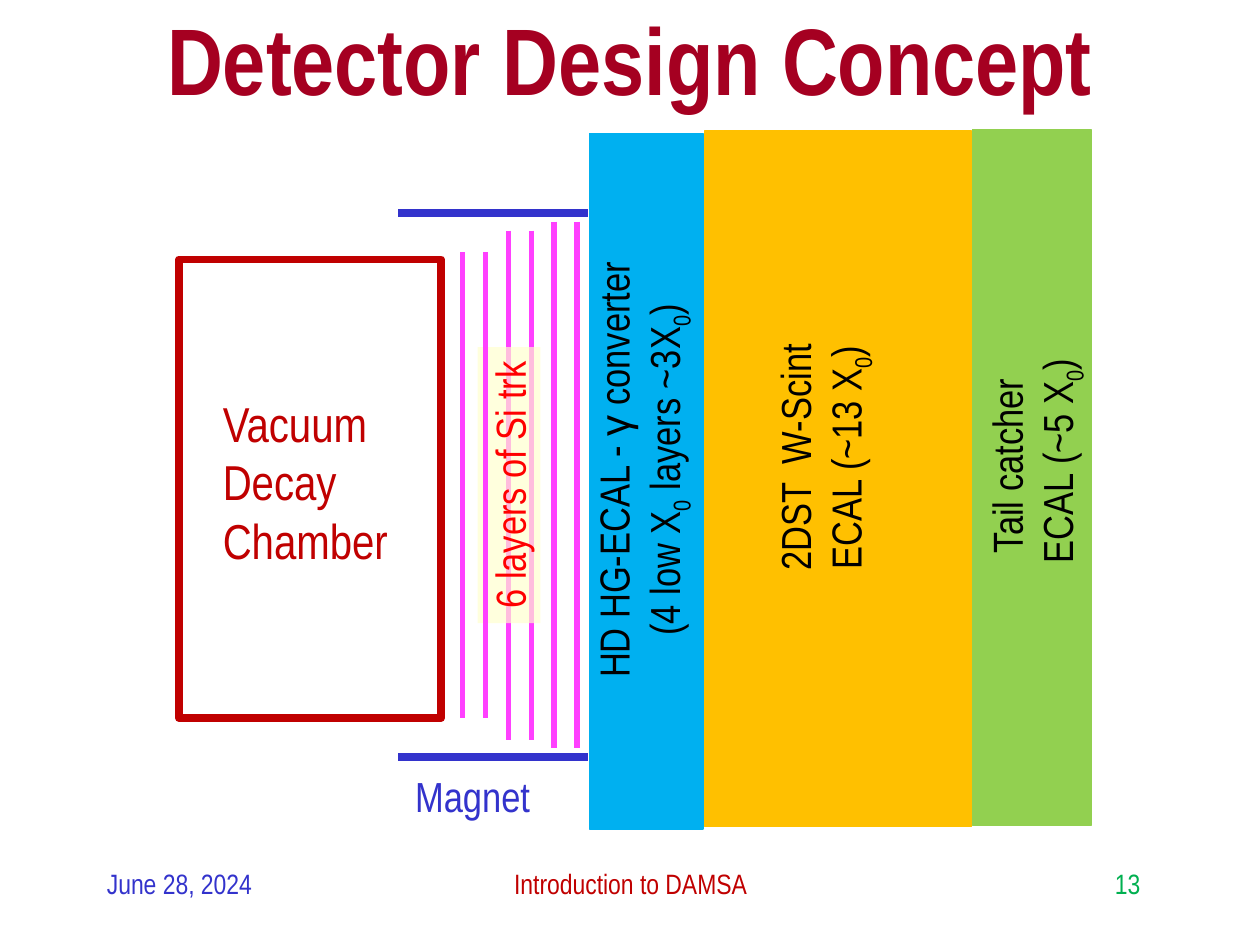
from dataclasses import dataclass

from lxml import etree
from pptx import Presentation
from pptx.dml.color import RGBColor
from pptx.enum.shapes import MSO_CONNECTOR, MSO_SHAPE
from pptx.enum.text import MSO_ANCHOR, PP_ALIGN
from pptx.oxml.ns import qn
from pptx.util import Inches, Pt


@dataclass(frozen=True)
class Theme:
    font: str = "Arial Narrow"
    greek_font: str = "Arial"
    title_size: int = 54
    chamber_size: int = 28
    label_size: int = 24
    footer_size: int = 16
    title: str = "A50021"
    blue: str = "3333CC"
    red: str = "C00000"
    green: str = "00B050"
    black: str = "000000"
    tracker: str = "FF40FF"
    tracker_text: str = "FF0000"
    tracker_label: str = "FFFFCC"
    converter: str = "00B0F0"
    scintillator: str = "FFC000"
    catcher: str = "92D050"


T = Theme()
SUB_ZERO = ("0", "sub")
GAMMA = ("γ", "greek")


def rgb(code):
    return RGBColor.from_string(code)


def write(tf, lines, size, color, align=PP_ALIGN.LEFT, bold=False):
    """Fill a frame; a line is a list of strings and (text, style) pairs."""
    for i, line in enumerate(lines):
        p = tf.paragraphs[0] if i == 0 else tf.add_paragraph()
        p.alignment = align
        p.font.name, p.font.size, p.font.bold = T.font, Pt(size), bold
        p.font.color.rgb = rgb(color)
        for piece in line:
            text, style = (piece, None) if isinstance(piece, str) else piece
            r = p.add_run()
            r.text = text
            if style == "sub":
                r._r.get_or_add_rPr().set("baseline", "-25000")
            elif style == "greek":
                r.font.name = T.greek_font


def add_text(s, box, lines, size, color, align=PP_ALIGN.LEFT, bold=False,
             rotation=0, anchor=MSO_ANCHOR.TOP):
    sp = s.shapes.add_textbox(*map(Inches, box))
    sp.rotation = rotation
    tf = sp.text_frame
    tf.word_wrap = True
    tf.vertical_anchor = anchor
    write(tf, lines, size, color, align, bold)
    return sp


def add_rect(s, box, fill=None, line=None, width=0.75):
    sp = s.shapes.add_shape(MSO_SHAPE.RECTANGLE, *map(Inches, box))
    sp.shadow.inherit = False
    if fill:
        sp.fill.solid()
        sp.fill.fore_color.rgb = rgb(fill)
    else:
        sp.fill.background()
    if line:
        sp.line.color.rgb = rgb(line)
        sp.line.width = Pt(width)
    else:
        sp.line.fill.background()
    return sp


def add_line(s, x1, y1, x2, y2, color, width):
    cx = s.shapes.add_connector(MSO_CONNECTOR.STRAIGHT,
                                *map(Inches, (x1, y1, x2, y2)))
    cx.line.color.rgb = rgb(color)
    cx.line.width = Pt(width)
    etree.SubElement(cx._element.spPr, qn("a:effectLst"))


def centered(cx, cy, w, h):
    return cx - w / 2, cy - h / 2, w, h


def add_chamber(s, x, y, w, h):
    add_rect(s, (x, y, w, h), line=T.red, width=4.5)
    add_text(s, (x + 0.25, y + 1.01, 1.56, 1.51), [["Vacuum Decay Chamber"]],
             T.chamber_size, T.red)


def add_calorimeters(s, x, y, h):
    # left, top, width, fill, label centre offset, label length, label lines
    blocks = [
        (0, 0.03, 0.9, T.converter, (-0.06, -0.09), 5.06,
         [["HD HG-ECAL - ", GAMMA, " converter"],
          ["(4 low X", SUB_ZERO, " layers ~3X", SUB_ZERO, ")"]]),
        (0.91, 0.01, 2.12, T.scintillator, (-0.14, -0.17), 3.48,
         [["2DST  W-Scint"], ["ECAL (~13 X", SUB_ZERO, ")"]]),
        (3.04, 0, 0.94, T.catcher, (0, -0.13), 3.19,
         [["Tail catcher "], ["ECAL (~5 X", SUB_ZERO, ")"]]),
    ]
    for left, top, w, fill, *_ in blocks:
        add_rect(s, (x + left, y + top, w, h), fill, fill)
    for left, top, w, _, (dx, dy), length, lines in blocks:
        center = x + left + w / 2 + dx, y + top + h / 2 + dy
        add_text(s, centered(*center, length, 0.91), lines, T.label_size,
                 T.black, PP_ALIGN.CENTER, rotation=270)


def add_magnet(s, x, y, w, h):
    for bar_y in (y, y + h):
        add_line(s, x, bar_y, x + w, bar_y, T.blue, 4.5)
    add_text(s, (x - 0.42, y + h + 0.06, 2.02, 0.5), [["Magnet"]],
             T.label_size, T.blue, PP_ALIGN.CENTER)


def add_tracker(s, x, cy, w):
    half_heights = (1.85, 1.85, 2.02, 2.02, 2.09, 2.09)
    pitch = w / (len(half_heights) - 1)

    def add_planes(*indexes):
        for i in indexes:
            px, half = x + i * pitch, half_heights[i]
            add_line(s, px, cy - half, px, cy + half, T.tracker, 3)

    # The translucent label lies between two sets of planes
    add_planes(0, 2, 3)
    sp = add_rect(s, centered(x + 0.37, cy, 2.19, 0.5), T.tracker_label)
    sp.rotation = 270
    color = sp.fill._xPr.find(qn("a:solidFill"))[0]
    etree.SubElement(color, qn("a:alpha"), val="66000")
    sp.text_frame.word_wrap = False
    write(sp.text_frame, [["6 layers of Si trk"]], T.label_size,
          T.tracker_text, PP_ALIGN.CENTER)
    add_planes(4, 5, 1)


def add_footer(s, y, h):
    for x, w, text, color, align in (
        (0.75, 2.08, "June 28, 2024", T.blue, PP_ALIGN.LEFT),
        (3.42, 3.17, "Introduction to DAMSA", T.red, PP_ALIGN.CENTER),
        (8.75, 0.5, "13", T.green, PP_ALIGN.LEFT),
    ):
        add_text(s, (x, y, w, h), [[text]], T.footer_size, color, align)


def main():
    prs = Presentation()
    prs.slide_width, prs.slide_height = Inches(10), Inches(7.5)
    s = prs.slides.add_slide(prs.slide_layouts[6])

    add_text(s, (0.25, 0, 9.5, 0.92), [["Detector Design Concept"]],
             T.title_size, T.title, PP_ALIGN.CENTER, bold=True,
             anchor=MSO_ANCHOR.MIDDLE)
    add_footer(s, 6.83, 0.5)
    add_chamber(s, 1.42, 2.06, 2.08, 3.64)
    add_calorimeters(s, 4.68, 1.03, 5.52)
    add_magnet(s, 3.16, 1.69, 1.51, 4.32)
    add_tracker(s, 3.67, 3.85, 0.91)

    prs.save("out.pptx")


if __name__ == "__main__":
    main()
